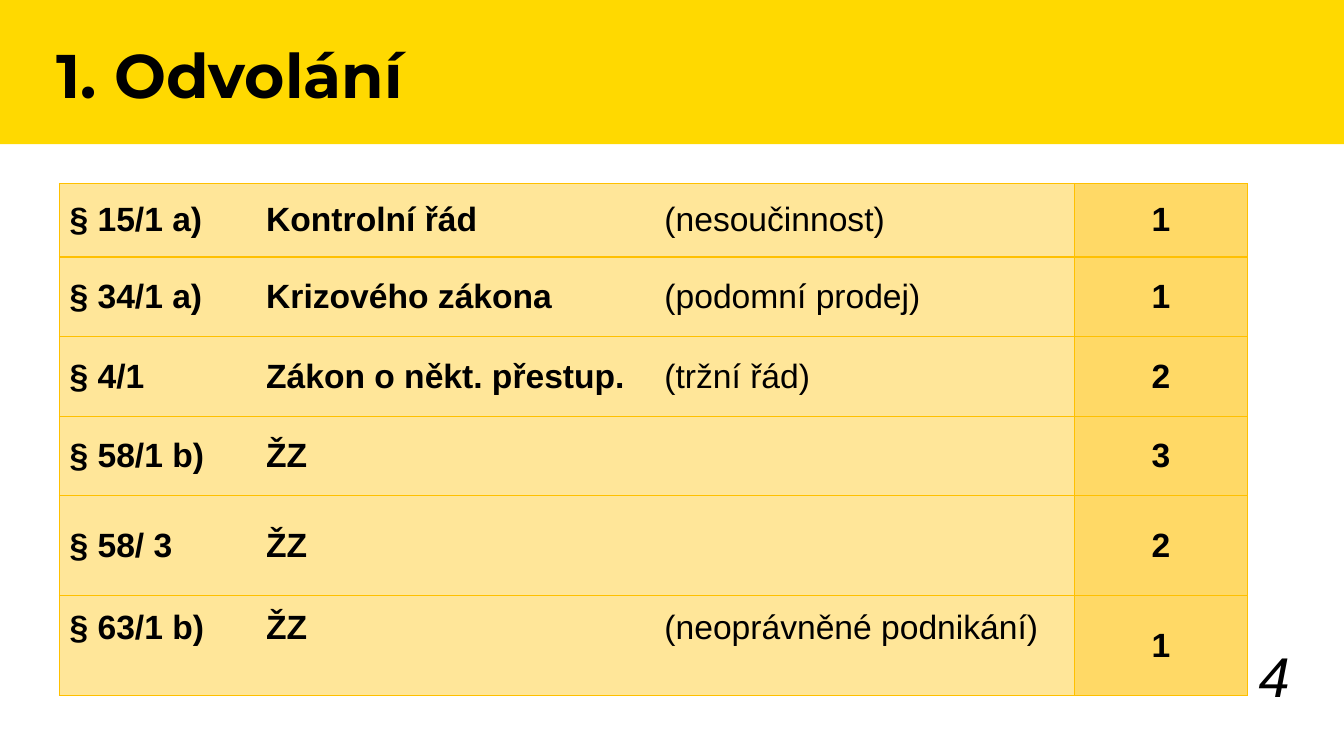
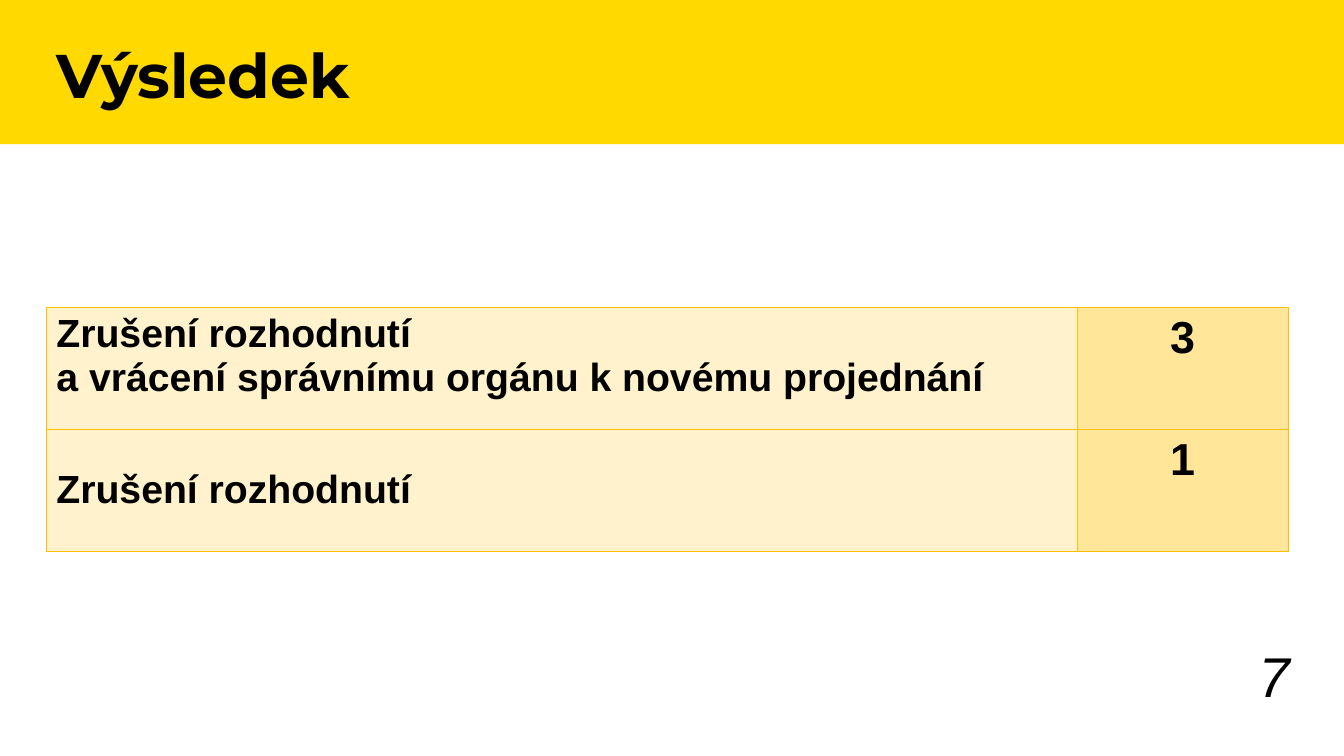
from lxml.etree import SubElement
from pptx import Presentation
from pptx.dml.color import RGBColor
from pptx.enum.shapes import MSO_SHAPE
from pptx.enum.text import MSO_ANCHOR, MSO_AUTO_SIZE, PP_ALIGN
from pptx.oxml.ns import qn
from pptx.util import Inches, Pt

WIDTH, HEIGHT = 13.33, 7.5
BAND_HEIGHT = 1.43
TITLE_BOX = (0.46, 0.4, 12.32, 1.02)
NUMBER_BOX = (9.89, 6.51, 3, 0.57)
BLACK, BAND, BORDER = "000000", "FFD900", "FFC000"
CREAM, PALE, GOLD = "FFF2CC", "FFE699", "FFD966"
TITLE_FONT, BODY_FONT = "Montserrat", "Arial"
MIDDLE, TOP = MSO_ANCHOR.MIDDLE, MSO_ANCHOR.TOP
LAW_TABS = (1.95, 5.9)
LIFTED = 0.4

APPEALS = {
    "title": "1. Odvolání",
    "number": "4",
    "origin": (0.59, 1.82),
    "columns": (10.07, 1.71),
    "heights": (0.73, 0.79, 0.79, 0.79, 0.99, 0.99),
    "fills": (PALE, GOLD),
    "sizes": (24, 24),
    "count_anchor": MIDDLE,
    "rows": [
        ("§ 15/1 a)\tKontrolní řád\t", "(nesoučinnost)", "1", MIDDLE, 0.05),
        ("§ 34/1 a)\tKrizového zákona\t", "(podomní prodej)", "1", MIDDLE, 0.05),
        ("§ 4/1\tZákon o někt. přestup.\t", "(tržní řád)", "2", MIDDLE, 0.05),
        ("§ 58/1 b)\tŽZ", "", "3", MIDDLE, 0.05),
        ("§ 58/ 3\tŽZ", "", "2", MIDDLE, 0.05),
        ("§ 63/1 b)\tŽZ\t", "(neoprávněné podnikání)", "1", MIDDLE, LIFTED),
    ],
}
RESULTS = {
    "title": "Výsledek",
    "number": "7",
    "origin": (0.46, 3.05),
    "columns": (10.23, 2.09),
    "heights": (1.21, 1.21),
    "fills": (CREAM, PALE),
    "sizes": (28, 32),
    "count_anchor": TOP,
    "rows": [
        ("Zrušení rozhodnutí\na vrácení správnímu orgánu k novému projednání", "", "3", TOP, 0.05),
        ("Zrušení rozhodnutí", "", "1", MIDDLE, 0.05),
    ],
}


def color(value):
    return RGBColor.from_string(value)


def inches(values):
    return [Inches(value) for value in values]


def style(paragraph, face, size, bold=False, italic=False, align=PP_ALIGN.LEFT):
    paragraph.alignment = align
    font = paragraph.font
    font.name, font.size = face, Pt(size)
    font.bold, font.italic = bold, italic
    font.color.rgb = color(BLACK)


def set_tabs(paragraph, stops):
    tab_list = SubElement(paragraph._p.get_or_add_pPr(), qn("a:tabLst"))
    for stop in stops:
        SubElement(tab_list, qn("a:tab"), pos=str(Inches(stop)), algn="l")


def set_borders(cell):
    properties = cell._tc.get_or_add_tcPr()
    for side in ("a:lnL", "a:lnR", "a:lnT", "a:lnB"):
        line = SubElement(properties, qn(side), w=str(Pt(1)))
        SubElement(SubElement(line, qn("a:solidFill")), qn("a:srgbClr"), val=BORDER)


def fill_cell(cell, text, note, fill, anchor, size, align):
    set_borders(cell)
    cell.fill.solid()
    cell.fill.fore_color.rgb = color(fill)
    cell.vertical_anchor = anchor
    cell.text_frame.text = text
    for paragraph in cell.text_frame.paragraphs:
        if "\t" in text:
            set_tabs(paragraph, LAW_TABS)
        style(paragraph, BODY_FONT, size, bold=True, align=align)
    if note:
        run = paragraph.add_run()
        run.text, run.font.bold = note, False


def add_counts(slide, content):
    columns, heights = content["columns"], content["heights"]
    box = inches((*content["origin"], sum(columns), sum(heights)))
    table = slide.shapes.add_table(len(heights), len(columns), *box).table
    table.first_row = table.horz_banding = False
    for column, width in zip(table.columns, columns):
        column.width = Inches(width)
    label_fill, count_fill = content["fills"]
    label_size, count_size = content["sizes"]
    for row, height, entry in zip(table.rows, heights, content["rows"]):
        row.height = Inches(height)
        label, note, count, anchor, bottom = entry
        label_cell, count_cell = row.cells
        fill_cell(label_cell, label, note, label_fill, anchor, label_size, PP_ALIGN.LEFT)
        label_cell.margin_bottom = Inches(bottom)
        fill_cell(count_cell, count, "", count_fill, content["count_anchor"],
                  count_size, PP_ALIGN.CENTER)


def add_number(slide, number):
    frame = slide.shapes.add_textbox(*inches(NUMBER_BOX)).text_frame
    frame.word_wrap = True
    frame.vertical_anchor = MSO_ANCHOR.BOTTOM
    frame.text = number
    style(frame.paragraphs[0], BODY_FONT, 40, italic=True, align=PP_ALIGN.RIGHT)


def set_title(slide, text):
    title = slide.shapes.title
    title.left, title.top, title.width, title.height = inches(TITLE_BOX)
    frame = title.text_frame
    frame.text = text
    frame.vertical_anchor = TOP
    frame.auto_size = MSO_AUTO_SIZE.NONE
    heading = frame.paragraphs[0]
    heading.line_spacing = 0.9
    style(heading, TITLE_FONT, 44, bold=True)


def put_band_on_layout(layout, slide):
    band = slide.shapes.add_shape(MSO_SHAPE.RECTANGLE, *inches((0, 0, WIDTH, BAND_HEIGHT)))
    band.shadow.inherit = False
    band.fill.solid()
    band.fill.fore_color.rgb = color(BAND)
    band.line.fill.background()
    layout.shapes._spTree.insert(2, band._element)


def main():
    deck = Presentation()
    deck.slide_width, deck.slide_height = inches((WIDTH, HEIGHT))
    layout = deck.slide_layouts[5]
    for content in (APPEALS, RESULTS):
        slide = deck.slides.add_slide(layout)
        if content is APPEALS:
            put_band_on_layout(layout, slide)
        set_title(slide, content["title"])
        add_counts(slide, content)
        add_number(slide, content["number"])
    deck.save("out.pptx")


if __name__ == "__main__":
    main()
